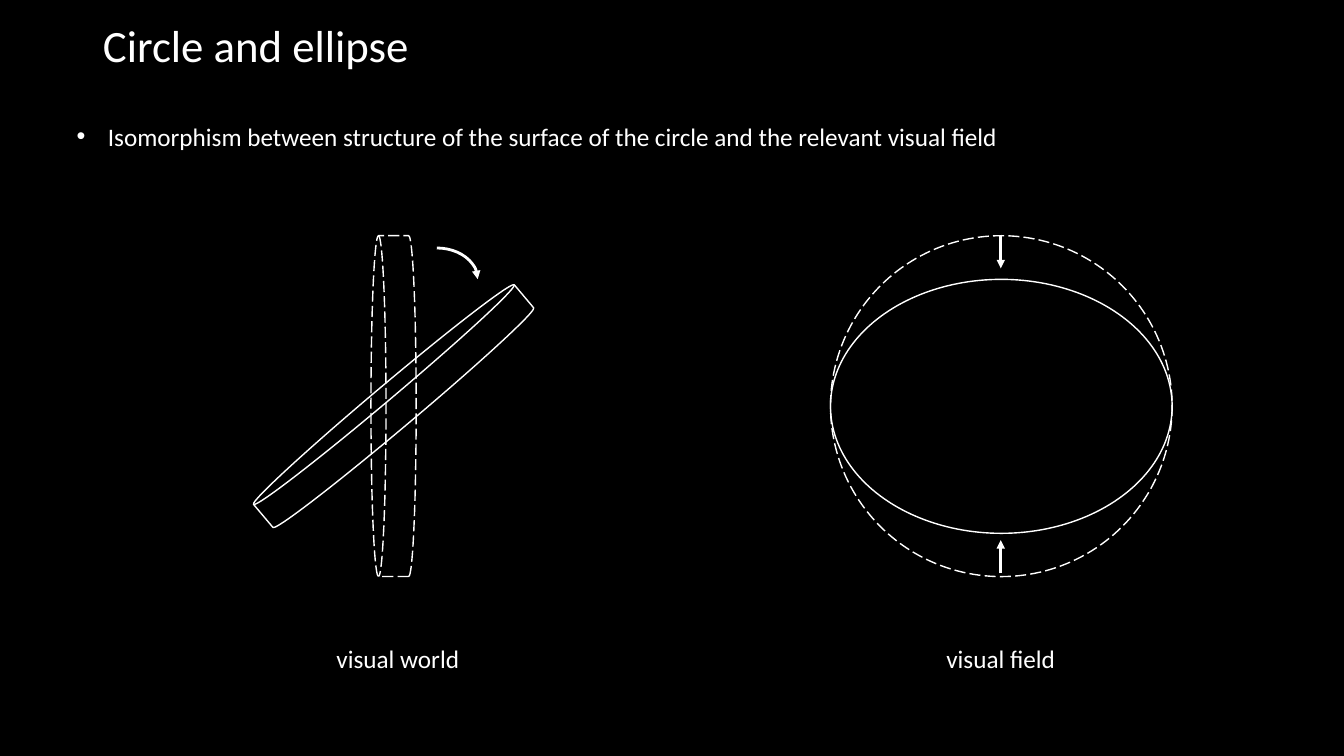
from lxml.etree import SubElement
from pptx import Presentation
from pptx.dml.color import RGBColor
from pptx.enum.dml import MSO_LINE
from pptx.enum.shapes import MSO_CONNECTOR, MSO_SHAPE
from pptx.enum.text import MSO_ANCHOR, MSO_AUTO_SIZE, PP_ALIGN
from pptx.oxml.ns import qn
from pptx.util import Cm, Pt

WHITE = "FFFFFF"


def paint(color, value):
    color.rgb = RGBColor.from_string(value)


def write(tf, text, size):
    p = tf.paragraphs[0]
    p.alignment = PP_ALIGN.LEFT
    r = p.add_run()
    r.text = text
    r.font.name = "Calibri"
    r.font.size = Pt(size)
    paint(r.font.color, WHITE)
    return p


prs = Presentation()
prs.slide_width, prs.slide_height = Cm(33.87), Cm(19.05)
s = prs.slides.add_slide(prs.slide_layouts[5])
s.background.fill.solid()
paint(s.background.fill.fore_color, "000000")

DRUM = MSO_SHAPE.FLOWCHART_DIRECT_ACCESS_STORAGE
drum_box = (9.35, 5.94, 1.14, 8.59)
outlines = [
    (DRUM, drum_box, 0, 1, True),
    (MSO_SHAPE.OVAL, (20.93, 5.94, 8.61, 8.59), 0, 1, True),
    (DRUM, drum_box, 49.9, 1, False),
    (MSO_SHAPE.OVAL, (20.93, 7.04, 8.61, 6.4), 0, 1, False),
    (MSO_SHAPE.ARC, (9.98, 6.25, 2.06, 1.57), 0, 2, False),
]
for kind, box, angle, width, dashed in outlines:
    sp = s.shapes.add_shape(kind, *[Cm(v) for v in box])
    sp.shadow.inherit = False
    sp.rotation = angle
    sp.fill.background()
    paint(sp.line.color, WHITE)
    sp.line.width = Pt(width)
    if dashed:
        sp.line.dash_style = MSO_LINE.LONG_DASH
    if kind == DRUM:
        xfrm = sp._element.spPr.find(qn("a:xfrm"))
        xfrm.set("flipH", "1")
        xfrm.set("flipV", "1")
    if kind == MSO_SHAPE.ARC:
        SubElement(sp.line._get_or_add_ln(), qn("a:tailEnd"), type="triangle")

for start, end in [(5.94, 6.76), (14.45, 13.61)]:
    arrow = s.shapes.add_connector(
        MSO_CONNECTOR.STRAIGHT, Cm(25.22), Cm(start), Cm(25.22), Cm(end))
    paint(arrow.line.color, WHITE)
    arrow.line.width = Pt(2)
    SubElement(arrow.line._get_or_add_ln(), qn("a:tailEnd"), type="triangle")
    SubElement(arrow._element.spPr, qn("a:effectLst"))

for left, caption in [(8.23, "visual world"), (23.6, "visual field")]:
    tf = s.shapes.add_textbox(Cm(left), Cm(16.08), Cm(4.52), Cm(1.02)).text_frame
    tf.word_wrap = True
    tf.auto_size = MSO_AUTO_SIZE.SHAPE_TO_FIT_TEXT
    write(tf, caption, 18)

title = s.shapes.title
title.left, title.top, title.width, title.height = Cm(2.34), Cm(-0.64), Cm(29.21), Cm(3.68)
title.text_frame.vertical_anchor = MSO_ANCHOR.MIDDLE
write(title.text_frame, "Circle and ellipse", 32).line_spacing = 0.9

tf = s.shapes.add_textbox(Cm(1.68), Cm(2.92), Cm(24), Cm(1.02)).text_frame
tf.word_wrap = False
tf.auto_size = MSO_AUTO_SIZE.SHAPE_TO_FIT_TEXT
p = write(tf, "Isomorphism between structure of the surface of the circle "
              "and the relevant visual field", 18)
pPr = p._p.get_or_add_pPr()
pPr.set("marL", str(Cm(0.79)))
pPr.set("indent", str(-Cm(0.79)))
SubElement(pPr, qn("a:buFont"), typeface="Arial")
SubElement(pPr, qn("a:buChar"), char="•")

prs.save("out.pptx")
